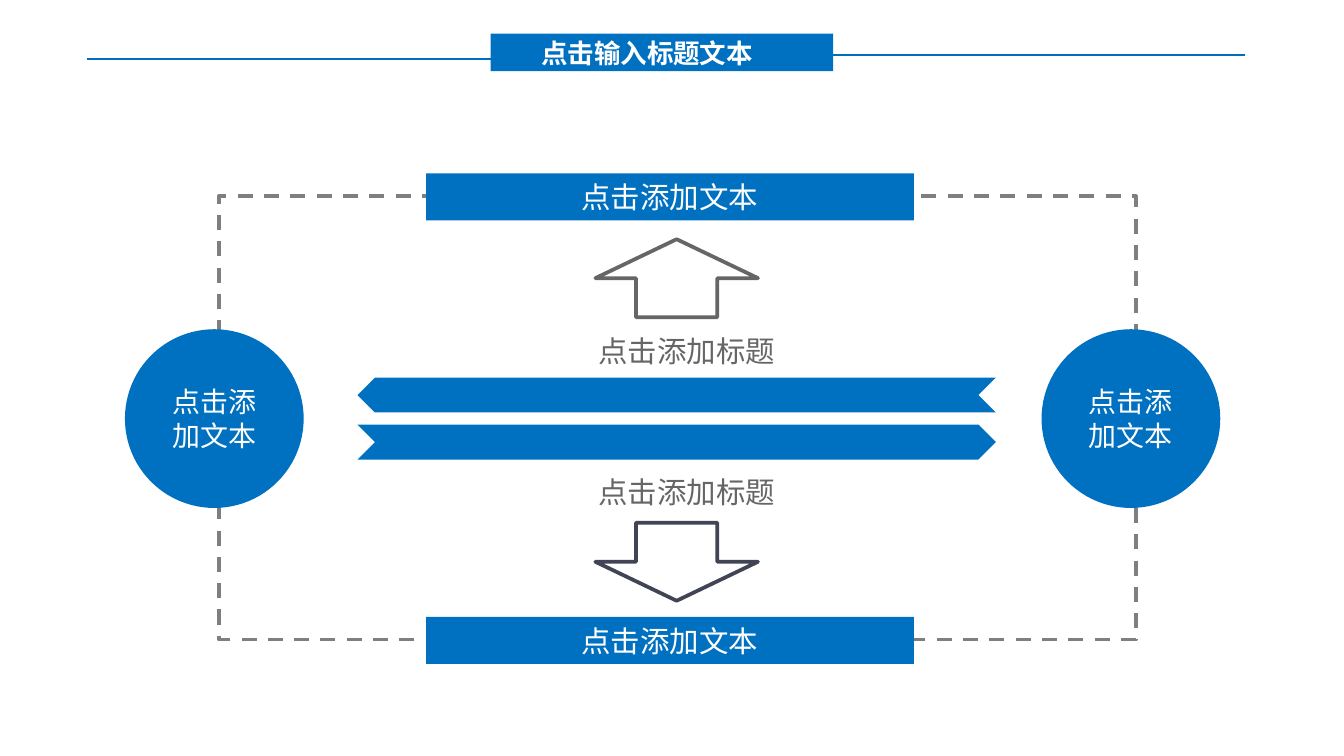
from lxml import etree
from pptx import Presentation
from pptx.dml.color import RGBColor
from pptx.enum.dml import MSO_LINE
from pptx.enum.shapes import MSO_CONNECTOR, MSO_SHAPE
from pptx.enum.text import MSO_ANCHOR, MSO_AUTO_SIZE, PP_ALIGN
from pptx.oxml.ns import qn
from pptx.util import Inches, Pt

RECT, OVAL = MSO_SHAPE.RECTANGLE, MSO_SHAPE.OVAL
UP, DOWN = MSO_SHAPE.UP_ARROW, MSO_SHAPE.DOWN_ARROW
STRAIGHT, DASH = MSO_CONNECTOR.STRAIGHT, MSO_LINE.DASH
LEFT, CENTER = PP_ALIGN.LEFT, PP_ALIGN.CENTER
TOP, MIDDLE = MSO_ANCHOR.TOP, MSO_ANCHOR.MIDDLE
FIT_SHAPE = MSO_AUTO_SIZE.SHAPE_TO_FIT_TEXT

FONT = "Noto Sans CJK SC"
COLORS = {
    "blue": "0070C0",
    "rule": "006EBC",
    "frame": "7F7F7F",
    "gray": "666666",
    "slate": "414455",
    "white": "FFFFFF",
}
LABEL = "点击添加文本"
CAPTION = "点击添加标题"


def color(name):
    return RGBColor.from_string(COLORS[name])


def paint(shape, fill=None, line=None, width=2):
    shape.shadow.inherit = False
    if fill:
        shape.fill.solid()
        shape.fill.fore_color.rgb = color(fill)
    else:
        shape.fill.background()
    if line:
        shape.line.color.rgb = color(line)
        shape.line.width = Pt(width)
    else:
        shape.line.fill.background()


def add_box(page, kind, box, **style):
    shape = page.shapes.add_shape(kind, *map(Inches, box))
    paint(shape, **style)
    return shape


def write(shape, text, size, ink, align=CENTER, anchor=MIDDLE,
          insets=(0.07, 0.04), wrap=True, bold=False):
    frame = shape.text_frame
    frame.text = text
    frame.word_wrap = wrap
    frame.vertical_anchor = anchor
    frame.margin_left = frame.margin_right = Inches(insets[0])
    frame.margin_top = frame.margin_bottom = Inches(insets[1])
    para = frame.paragraphs[0]
    para.alignment = align
    span = para.runs[0]
    span.font.name, span.font.size, span.font.bold = FONT, Pt(size), bold
    span.font.color.rgb = color(ink)
    # East Asian typeface
    etree.SubElement(span._r.get_or_add_rPr(), qn("a:ea")).set("typeface", FONT)


def add_text(page, box, text, size, ink, **options):
    shape = page.shapes.add_textbox(*map(Inches, box))
    write(shape, text, size, ink, align=LEFT, anchor=TOP, **options)
    shape.text_frame.auto_size = FIT_SHAPE


def add_rule(page, left, y, length):
    rule = page.shapes.add_connector(
        STRAIGHT, Inches(left), Inches(y), Inches(left + length), Inches(y))
    rule.line.color.rgb = color("rule")
    rule.line.width = Pt(0.75)
    etree.SubElement(rule._element.spPr, qn("a:effectLst"))


def add_ribbon(page, box, points_right):
    left, top, width, height = box
    notch = height / 2
    outline = [(0, 0), (width - notch, 0), (width, notch),
               (width - notch, height), (0, height), (notch, notch)]
    if not points_right:
        outline = [(width - x, y) for x, y in outline]
    points = [(Inches(left + x), Inches(top + y)) for x, y in outline]
    builder = page.shapes.build_freeform(*points[0], scale=1.0)
    builder.add_line_segments(points[1:], close=True)
    paint(builder.convert_to_shape(), fill="blue")


def add_header(page, box):
    left, top, width, height = box
    add_box(page, RECT, (left + 3, top, 2.55, height), fill="blue")
    add_text(page, (left + 3.28, top - 0.02, 1.86, 0.34), "点击输入标题文本",
             14.2, "white", insets=(0.1, 0.05), bold=True)
    rule = 3.08
    add_rule(page, left, top + 0.19, rule)
    add_rule(page, left + width - rule, top + 0.16, rule)


def add_cycle(page, box):
    left, top, width, height = box
    # Dashed loop
    loop = add_box(page, RECT, box, line="frame")
    loop.line.dash_style = DASH

    # Circles on both sides
    for x in (left - 0.7, left + width - 0.7):
        circle = add_box(page, OVAL, (x, top + 0.99, 1.33, 1.33), fill="blue")
        write(circle, LABEL, 15, "white")

    # Upper and lower halves: bar, arrow and caption
    halves = [
        (top, UP, "gray", top + 0.32, top + 0.98),
        (top + height, DOWN, "slate", top + 2.43, top + 2.03),
    ]
    for edge, arrow, ink, arrow_top, caption_top in halves:
        bar = add_box(page, RECT, (left + 1.54, edge - 0.17, 3.63, 0.35),
                      fill="blue")
        write(bar, LABEL, 15.8, "white")
        add_box(page, arrow, (left + 2.8, arrow_top, 1.21, 0.58), line=ink)
        add_text(page, (left + 2.75, caption_top, 1.47, 0.34), CAPTION,
                 15.8, "gray", wrap=False)

    # Opposed ribbons in the centre
    for row, points_right in enumerate((False, True)):
        add_ribbon(page, (left + 1.03, top + 1.35 + row * 0.35, 4.75, 0.26),
                   points_right)


def main():
    deck = Presentation()
    # Widescreen page, 16:9
    deck.slide_width, deck.slide_height = Inches(10), Inches(10 * 9 / 16)
    page = deck.slides.add_slide(deck.slide_layouts[6])
    add_cycle(page, (1.63, 1.46, 6.82, 3.3))
    add_header(page, (0.65, 0.25, 8.61, 0.28))
    deck.save("out.pptx")


if __name__ == "__main__":
    main()
